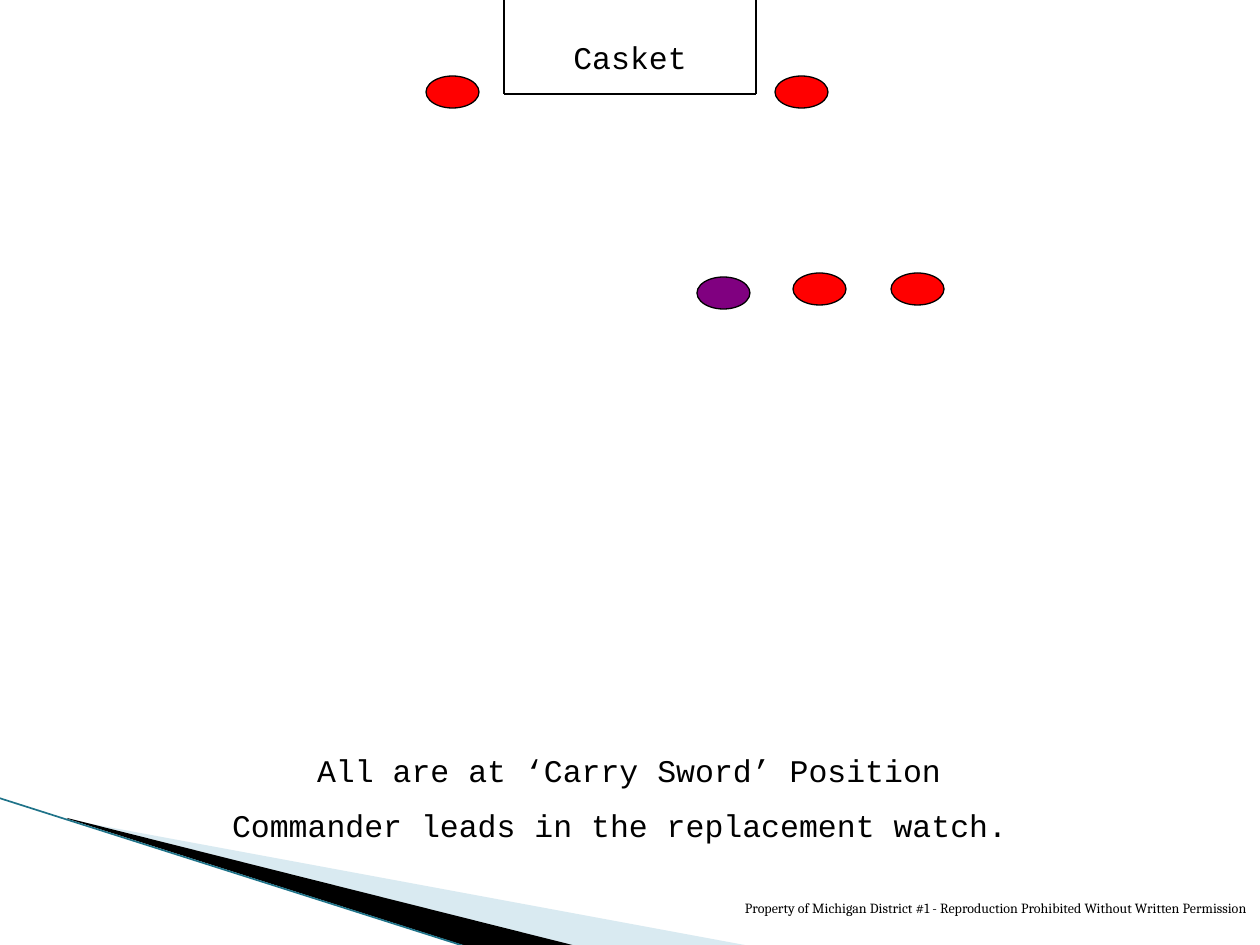
from dataclasses import dataclass

from lxml import etree
from pptx import Presentation
from pptx.dml.color import RGBColor
from pptx.enum import shapes, text
from pptx.oxml.ns import qn
from pptx.util import Pt

EMU_PER_PX = 914400 / 126


@dataclass(frozen=True)
class Theme:
    """Hold the colours, fonts and sizes of the slide."""
    black: str = "000000"
    guard: str = "FF0000"
    commander: str = "800080"
    pale: str = "A0CBDC"
    teal: str = "1F7389"
    label_font: str = "Courier New"
    notice_font: str = "Cambria"
    label_size: int = 18
    notice_size: int = 8
    outline: float = 0.75
    edge: float = 0.95


THEME = Theme()


def px(length):
    """Turn a length in px into EMU."""
    return round(length * EMU_PER_PX)


def rgb(colour):
    """Return a colour object for a hex string."""
    return RGBColor.from_string(colour)


def add_text(slide, box, lines, font=THEME.label_font, size=THEME.label_size,
             align=text.PP_ALIGN.CENTER, gap=10, wrap=True):
    """Add a text box with one paragraph for each line."""
    frame = slide.shapes.add_textbox(*map(px, box)).text_frame
    frame.word_wrap = wrap
    for index, line in enumerate(lines):
        paragraph = frame.add_paragraph() if index else frame.paragraphs[0]
        paragraph.text = line
        paragraph.alignment = align
        if index:
            paragraph.space_before = Pt(gap)
        paragraph.font.name = font
        paragraph.font.size = Pt(size)
        paragraph.font.color.rgb = rgb(THEME.black)


def add_line(slide, start, end, colour=THEME.black, width=THEME.outline):
    """Add a straight line without a shadow."""
    connector = slide.shapes.add_connector(
        shapes.MSO_CONNECTOR.STRAIGHT, *map(px, start + end))
    connector.line.color.rgb = rgb(colour)
    connector.line.width = Pt(width)
    etree.SubElement(connector.element.spPr, qn("a:effectLst"))


def add_wedge(slide, points, colour, opacity=100):
    """Add a closed outline filled with one colour."""
    builder = slide.shapes.build_freeform(*points[0], scale=EMU_PER_PX)
    builder.add_line_segments(points[1:], close=True)
    shape = builder.convert_to_shape()
    shape.shadow.inherit = False
    shape.line.fill.background()
    shape.fill.solid()
    shape.fill.fore_color.rgb = rgb(colour)
    if opacity < 100:
        fill = shape.element.spPr.find(qn("a:solidFill"))
        etree.SubElement(fill[0], qn("a:alpha"), val=str(opacity * 1000))


def add_person(slide, left, top, colour=THEME.guard, rotation=180):
    """Add the oval that stands for one person."""
    shape = slide.shapes.add_shape(
        shapes.MSO_SHAPE.OVAL, px(left), px(top), px(53), px(32))
    shape.rotation = rotation
    shape.shadow.inherit = False
    shape.fill.solid()
    shape.fill.fore_color.rgb = rgb(colour)
    shape.line.color.rgb = rgb(THEME.black)
    shape.line.width = Pt(THEME.outline)


def add_corner(slide, left, top):
    """Draw the swoosh in the lower left corner."""
    def place(*points):
        return [(left + x, top + y) for x, y in points]

    add_wedge(slide, place((70, 22), (750, 148), (575, 148), (70, 21)),
              THEME.pale, opacity=40)
    add_wedge(slide, place((67, 20), (576, 148), (469, 149), (68, 21)),
              THEME.black)
    add_line(slide, *place((-1, 0), (467, 149)), colour=THEME.teal,
             width=THEME.edge)


def add_casket(slide, left, top, width, height):
    """Draw the casket outline, its name and the two guards beside it."""
    right, bottom = left + width, top + height
    add_line(slide, (left, bottom), (right, bottom))
    add_line(slide, (left, bottom), (left, top))
    add_line(slide, (right, bottom), (right, top))
    add_text(slide, (left + 36, top + 32, width - 72, 50), ["Casket"],
             wrap=False)
    for guard_left in (left - 78, right + 19):
        add_person(slide, guard_left, bottom - 18)


def add_watch(slide, left, top):
    """Draw the commander followed by the replacement guards."""
    add_person(slide, left, top + 4, THEME.commander, rotation=0)
    for offset in (96, 194):
        add_person(slide, left + offset, top)


def main():
    """Build and save the slide."""
    presentation = Presentation()
    presentation.slide_width, presentation.slide_height = px(1260), px(945)
    slide = presentation.slides.add_slide(presentation.slide_layouts[6])
    add_corner(slide, 0, 798)
    add_casket(slide, 504, 0, 252, 94)
    add_watch(slide, 697, 273)
    add_text(slide, (125, 745, 1008, 107),
             ["All are at ‘Carry Sword’ Position",
              "Commander leads in the replacement watch. "])
    add_text(slide, (557, 893, 703, 33),
             ["Property of Michigan District #1 - Reproduction Prohibited "
              "Without Written Permission"],
             font=THEME.notice_font, size=THEME.notice_size,
             align=text.PP_ALIGN.RIGHT)
    presentation.save("out.pptx")


if __name__ == "__main__":
    main()
